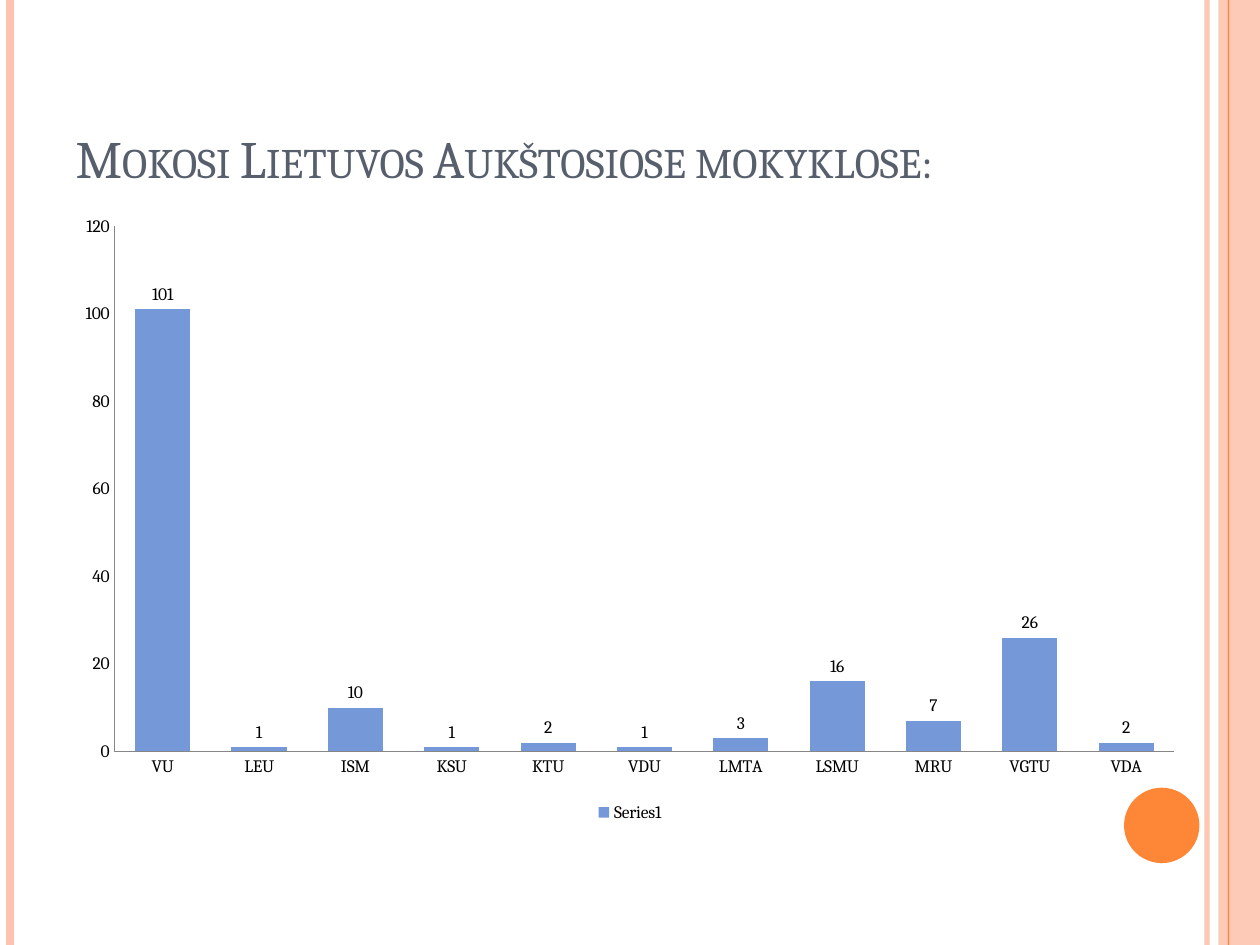
"""Build a slide with a column chart of students per Lithuanian university."""
from pptx import Presentation
from pptx.chart.data import CategoryChartData
from pptx.dml.color import RGBColor
from pptx.enum.chart import XL_CHART_TYPE, XL_LABEL_POSITION, XL_LEGEND_POSITION, XL_TICK_MARK
from pptx.enum.shapes import MSO_CONNECTOR, MSO_SHAPE
from pptx.enum.text import MSO_ANCHOR, PP_ALIGN
from pptx.oxml import parse_xml
from pptx.oxml.ns import nsdecls, qn
from pptx.oxml.xmlchemy import OxmlElement
from pptx.util import Cm, Pt

COLUMN = XL_CHART_TYPE.COLUMN_CLUSTERED
OUTER = XL_LABEL_POSITION.OUTSIDE_END
BOTTOM = XL_LEGEND_POSITION.BOTTOM
NO_TICK = XL_TICK_MARK.NONE
STRAIGHT = MSO_CONNECTOR.STRAIGHT
RECT, OVAL = MSO_SHAPE.RECTANGLE, MSO_SHAPE.OVAL
LOW, LEFT = MSO_ANCHOR.BOTTOM, PP_ALIGN.LEFT

PEACH = RGBColor(0xFE, 0xC3, 0xAE)
ORANGE = RGBColor(0xFE, 0x86, 0x37)
SLATE = RGBColor(0x57, 0x5F, 0x6D)
BLUE = RGBColor(0x75, 0x98, 0xD9)
GRAY = RGBColor(0x86, 0x86, 0x86)
BLACK = RGBColor(0, 0, 0)

FACE = "Cambria"
WIDTH, HEIGHT = Cm(25.4), Cm(19.05)
COUNTS = {
    "VU": 101, "LEU": 1, "ISM": 10, "KSU": 1, "KTU": 2, "VDU": 1,
    "LMTA": 3, "LSMU": 16, "MRU": 7, "VGTU": 26, "VDA": 2,
}


def set_alpha(shape, percent):
    """Make the shape's first solid colour partly transparent."""
    color = next(shape._element.spPr.iter(qn("a:srgbClr")))
    alpha = OxmlElement("a:alpha")
    alpha.set("val", str(percent * 1000))
    color.append(alpha)


def add_stripe(slide, left, color, weight):
    """Draw a line down the full height of the slide."""
    stripe = slide.shapes.add_connector(STRAIGHT, left, 0, left, HEIGHT)
    stripe.line.color.rgb = color
    stripe.line.width = Pt(weight)
    stripe._element.spPr.append(OxmlElement("a:effectLst"))
    return stripe


def add_block(slide, kind, box, color):
    """Add a plain filled shape without an outline."""
    block = slide.shapes.add_shape(kind, *box)
    block.shadow.inherit = False
    block.fill.solid()
    block.fill.fore_color.rgb = color
    block.line.fill.background()
    return block


def set_title(slide, text):
    """Place and format the title in small capitals."""
    title = slide.shapes.title
    title.left, title.top = Cm(1.27), Cm(0.76)
    title.width, title.height = Cm(20.75), Cm(3.18)
    frame = title.text_frame
    frame.text = text
    frame.vertical_anchor = LOW
    para = frame.paragraphs[0]
    para.alignment = LEFT
    para.font.name = FACE
    para.font.size = Pt(30)
    para.font.color.rgb = SLATE
    para.runs[0]._r.get_or_add_rPr().set("cap", "small")


def style_axis(axis):
    """Give an axis a thin gray line and no ticks or grid."""
    axis.has_major_gridlines = False
    axis.major_tick_mark = axis.minor_tick_mark = NO_TICK
    axis.format.line.color.rgb = GRAY
    axis.format.line.width = Pt(0.75)


def add_columns(slide, counts):
    """Add the column chart with value labels and a legend."""
    data = CategoryChartData()
    data.categories = list(counts)
    data.add_series("Series1", list(counts.values()))
    box = Cm(1.27), Cm(4.11), Cm(22.86), Cm(12.57)
    chart = slide.shapes.add_chart(COLUMN, *box, data).chart
    chart.font.name = FACE
    chart.font.size = Pt(10)
    chart.font.color.rgb = BLACK
    chart.has_title = False
    chart.has_legend = True
    chart.legend.position = BOTTOM
    chart.legend.include_in_layout = False
    style_axis(chart.category_axis)
    style_axis(chart.value_axis)
    scale = chart.value_axis
    scale.minimum_scale, scale.maximum_scale, scale.major_unit = 0, 120, 20

    plot = chart.plots[0]
    plot.vary_by_categories = False
    plot.gap_width = 75
    fill = plot.series[0].format.fill
    fill.solid()
    fill.fore_color.rgb = BLUE
    plot.has_data_labels = True
    plot.data_labels.show_value = True
    plot.data_labels.position = OUTER

    clear = f'<c:spPr {nsdecls("c", "a")}><a:noFill/><a:ln><a:noFill/></a:ln></c:spPr>'
    chart._chartSpace.find(qn("c:chart")).addnext(parse_xml(clear))


def main():
    """Build and save the slide."""
    deck = Presentation()
    deck.slide_width, deck.slide_height = WIDTH, HEIGHT
    slide = deck.slides.add_slide(deck.slide_layouts[5])
    set_alpha(add_stripe(slide, Cm(24.33), PEACH, 3), 93)
    add_stripe(slide, Cm(0.2), PEACH, 4.5)
    add_stripe(slide, Cm(24.77), ORANGE, 1.5)
    band = Cm(24.56), 0, Cm(0.84), HEIGHT
    set_alpha(add_block(slide, RECT, band, PEACH), 87)
    add_stripe(slide, Cm(24.77), ORANGE, 0.75)
    disc = Cm(22.66), Cm(15.88), Cm(1.52), Cm(1.52)
    add_block(slide, OVAL, disc, ORANGE)
    set_title(slide, "Mokosi Lietuvos Aukštosiose mokyklose:")
    add_columns(slide, COUNTS)
    deck.save("out.pptx")


if __name__ == "__main__":
    main()
